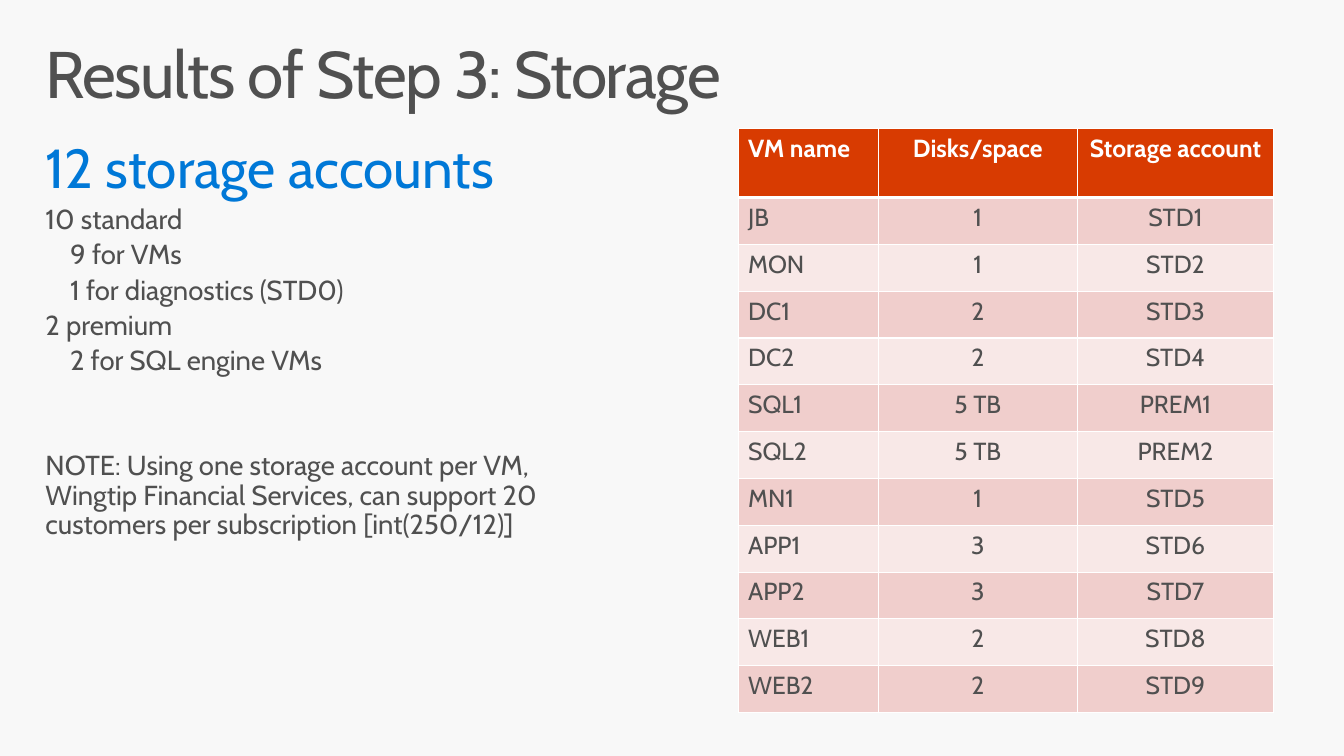
from dataclasses import dataclass

from lxml.etree import SubElement
from pptx import Presentation
from pptx.dml.color import RGBColor
from pptx.enum.text import MSO_ANCHOR, MSO_AUTO_SIZE, PP_ALIGN
from pptx.oxml.ns import qn
from pptx.util import Inches, Pt


@dataclass(frozen=True)
class Theme:
    font: str = "Cabin"
    background: str = "F8F8F8"
    text: str = "505050"
    accent: str = "0078D7"
    white: str = "FFFFFF"
    header: str = "D83B01"
    bands: tuple = ("F0CECC", "F8E8E7")
    title_size: int = 48
    heading_size: int = 40
    body_size: int = 20
    table_size: int = 18


THEME = Theme()

# Text, level, space before in points
SUMMARY = [
    ("10 standard", 1, 4),
    ("9 for VMs", 2, 4),
    ("1 for diagnostics (STD0)", 2, 4),
    ("2 premium", 1, 4),
    ("2 for SQL engine VMs", 2, 4),
    ("NOTE: Using one storage account per VM, Wingtip Financial Services, "
     "can support 20 customers per subscription [int(250/12)]", 1, 55),
]

STORAGE_HEADER = ("VM name", "Disks/space", "Storage account")
STORAGE_ROWS = [
    ("JB", "1", "STD1"),
    ("MON", "1", "STD2"),
    ("DC1", "2", "STD3"),
    ("DC2", "2", "STD4"),
    ("SQL1", "5 TB", "PREM1"),
    ("SQL2", "5 TB", "PREM2"),
    ("MN1", "1", "STD5"),
    ("APP1", "3", "STD6"),
    ("APP2", "3", "STD7"),
    ("WEB1", "2", "STD8"),
    ("WEB2", "2", "STD9"),
]


def write(p, text, size=THEME.body_size, color=THEME.text, bold=False,
          align=PP_ALIGN.LEFT, level=0, left=0, before=0, line=1.0, tracking=0):
    """Fill a paragraph with one formatted, unbulleted run."""
    p.alignment, p.level = align, level
    p.line_spacing, p.space_before, p.space_after = line, Pt(before), Pt(0)
    pPr = p._p.get_or_add_pPr()
    pPr.set("marL", str(Inches(left)))
    pPr.set("indent", "0")
    SubElement(pPr, qn("a:buNone"))
    r = p.add_run()
    r.text = text
    r.font.name, r.font.size, r.font.bold = THEME.font, Pt(size), bold
    r.font.color.rgb = RGBColor.from_string(color)
    if tracking:
        r._r.get_or_add_rPr().set("spc", str(round(tracking * 100)))


def place(sp, box):
    """Move a placeholder to its box and return its text frame."""
    sp.left, sp.top, sp.width, sp.height = map(Inches, box)
    tf = sp.text_frame
    tf.word_wrap, tf.auto_size = True, MSO_AUTO_SIZE.NONE
    tf.vertical_anchor = MSO_ANCHOR.TOP
    tf.margin_left = tf.margin_right = Inches(0.16)
    tf.margin_top = tf.margin_bottom = Inches(0.1)
    return tf


def fill_title(s, box):
    tf = place(s.shapes.title, box)
    write(tf.paragraphs[0], "Results of Step 3: Storage",
          size=THEME.title_size, line=0.9, tracking=-1)


def fill_summary(s, box):
    tf = place(s.placeholders[1], box)
    write(tf.paragraphs[0], "12 storage accounts", size=THEME.heading_size,
          color=THEME.accent, before=8, line=0.9)
    for text, level, before in SUMMARY:
        write(tf.add_paragraph(), text, level=level, left=0.25 * (level - 1),
              before=before, line=0.9)


def style_cell(cell, fill, top=1, bottom=1):
    """Set the fill and white borders; top and bottom are widths in points."""
    tcPr = cell._tc.get_or_add_tcPr()
    for side, width in (("L", 1), ("R", 1), ("T", top), ("B", bottom)):
        ln = SubElement(tcPr, qn(f"a:ln{side}"), w=str(Pt(width)))
        SubElement(SubElement(ln, qn("a:solidFill")), qn("a:srgbClr"),
                   val=THEME.white)
    cell.fill.solid()
    cell.fill.fore_color.rgb = RGBColor.from_string(fill)


def add_storage_table(s, box, col_widths=(1.42, 2.01, 1.99), header_height=0.7):
    rows = [STORAGE_HEADER, *STORAGE_ROWS]
    table = s.shapes.add_table(len(rows), len(col_widths),
                               *map(Inches, box)).table
    for column, width in zip(table.columns, col_widths):
        column.width = Inches(width)
    row_height = (box[3] - header_height) / len(STORAGE_ROWS)
    for i, values in enumerate(rows):
        is_header = i == 0
        table.rows[i].height = Inches(header_height if is_header else row_height)
        for j, value in enumerate(values):
            cell = table.cell(i, j)
            style_cell(cell, THEME.header if is_header else THEME.bands[(i - 1) % 2],
                       top=3 if i == 1 else 1, bottom=3 if is_header else 1)
            write(cell.text_frame.paragraphs[0], value, size=THEME.table_size,
                  color=THEME.white if is_header else THEME.text, bold=is_header,
                  align=PP_ALIGN.CENTER if j else PP_ALIGN.LEFT)


def build_storage_slide(prs):
    s = prs.slides.add_slide(prs.slide_layouts[1])
    s.background.fill.solid()
    s.background.fill.fore_color.rgb = RGBColor.from_string(THEME.background)
    fill_title(s, (0.3, 0.32, 13, 1))
    fill_summary(s, (0.3, 1.33, 5.5, 4.38))
    add_storage_table(s, (7.47, 1.3, 5.42, 5.91))


def main():
    prs = Presentation()
    prs.slide_width, prs.slide_height = Inches(13.6), Inches(7.65)
    build_storage_slide(prs)
    prs.save("out.pptx")


if __name__ == "__main__":
    main()
